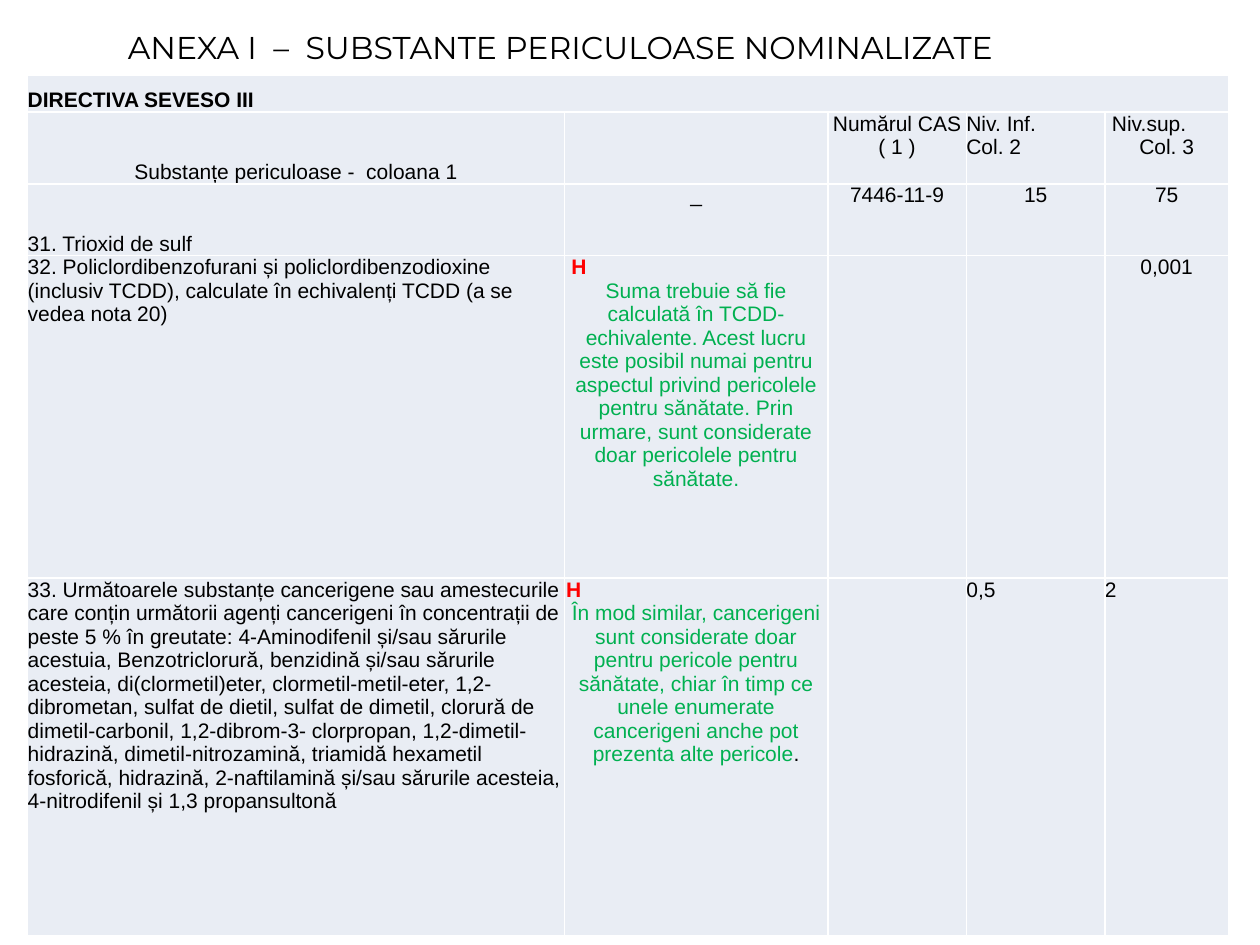
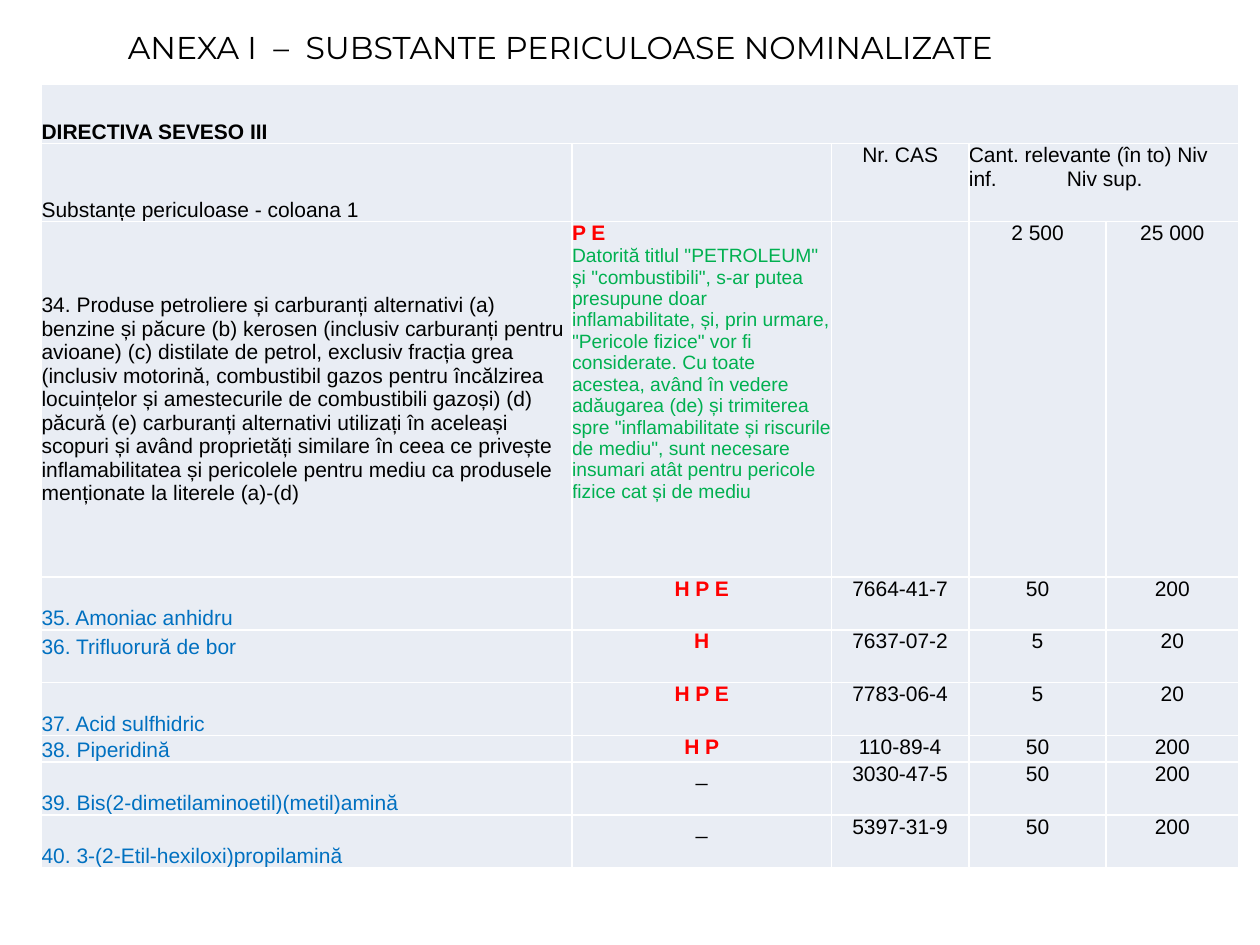
from dataclasses import dataclass
from lxml.etree import SubElement
from pptx import Presentation
from pptx.dml.color import RGBColor
from pptx.enum.text import MSO_ANCHOR, MSO_AUTO_SIZE, PP_ALIGN
from pptx.oxml.ns import qn
from pptx.util import Pt

COLORS = {
    "text": "000000",
    "cell": "E9EDF4",
    "border": "FFFFFF",
    "hazard": "FF0000",
    "note": "00B050",
    "substance": "0070C0",
}

# Text styles: colour, size, bold
STYLES = {
    "plain": ("text", 12, False),
    "heading": ("text", 12, True),
    "hazard": ("hazard", 12, True),
    "note": ("note", 12, False),
    "small note": ("note", 11, False),
    "substance": ("substance", 12, False),
}
TITLE = "ANEXA I  –  SUBSTANTE PERICULOASE NOMINALIZATE"
DIRECTIVE = "DIRECTIVA SEVESO III"
LEFT, CENTER = PP_ALIGN.LEFT, PP_ALIGN.CENTER
TOP, MIDDLE, BOTTOM = MSO_ANCHOR.TOP, MSO_ANCHOR.MIDDLE, MSO_ANCHOR.BOTTOM


@dataclass
class Line:
    """One paragraph: (text, style) spans with their placing."""
    spans: list
    align: PP_ALIGN = LEFT
    indent: float = 0
    tab: float = 0


@dataclass
class Entry:
    """The content of one table cell."""
    lines: list
    anchor: MSO_ANCHOR = TOP
    span: int = 1
    bottom_gap: float = 0


def entry(text, style="plain", align=LEFT, anchor=TOP, **options):
    return Entry([Line([(text, style)], align)], anchor, **options)


def centered(text, style="plain"):
    return entry(text, style, CENTER)


def hazard_note(hazard, note, style="note", align=CENTER, indent=0, ending=""):
    """Red hazard letters with a green remark below."""
    spans = [(note, style)] + ([(ending, "plain")] if ending else [])
    return Entry([Line([(hazard, "hazard")], indent=indent), Line(spans, align)])


def substance_row(name, hazard, cas, low, high, gap=0):
    hazard_style = "plain" if hazard == "_" else "hazard"
    return [entry(name, "substance", anchor=BOTTOM, bottom_gap=gap),
            centered(hazard, hazard_style),
            centered(cas), centered(low), centered(high)]


def set_font(span, name, size, color, bold=False):
    span.font.name = name
    span.font.size = Pt(size)
    span.font.bold = bold
    span.font.color.rgb = RGBColor.from_string(COLORS[color])


def write_line(para, line):
    para.alignment = line.align
    para.text = line.spans[0][0]
    for text, _ in line.spans[1:]:
        para.add_run().text = text
    for span, (_, style) in zip(para.runs, line.spans):
        color, size, bold = STYLES[style]
        set_font(span, "Arial", size, color, bold)
    properties = para._p.get_or_add_pPr()
    if line.indent:
        properties.set("marL", str(Pt(line.indent)))
    if line.tab:
        stops = SubElement(properties, qn("a:tabLst"))
        SubElement(stops, qn("a:tab"), pos=str(Pt(line.tab)), algn="l")


def style_cell(cell):
    """White borders, pale fill and no margins."""
    properties = cell._tc.get_or_add_tcPr()
    for side in ("lnL", "lnR", "lnT", "lnB"):
        border = SubElement(properties, qn(f"a:{side}"), w=str(Pt(1)))
        fill = SubElement(border, qn("a:solidFill"))
        SubElement(fill, qn("a:srgbClr"), val=COLORS["border"])
    cell.fill.solid()
    cell.fill.fore_color.rgb = RGBColor.from_string(COLORS["cell"])
    cell.margin_left = cell.margin_right = cell.margin_top = cell.margin_bottom = 0


def write_cell(cell, content):
    cell.vertical_anchor = content.anchor
    cell.margin_bottom = Pt(content.bottom_gap)
    frame = cell.text_frame
    for number, line in enumerate(content.lines):
        write_line(frame.add_paragraph() if number else frame.paragraphs[0], line)


def add_substance_table(page, left, top, widths, heights, rows):
    frame = page.shapes.add_table(len(heights), len(widths), Pt(left), Pt(top),
                                  Pt(sum(widths)), Pt(sum(heights)))
    table = frame.table
    table.first_row = table.horz_banding = False
    for column, width in zip(table.columns, widths):
        column.width = Pt(width)
    for row, height in zip(table.rows, heights):
        row.height = Pt(height)
    for cell in table.iter_cells():
        style_cell(cell)
    for row_number, contents in enumerate(rows):
        for column_number, content in enumerate(contents):
            if content is None:
                continue
            cell = table.cell(row_number, column_number)
            if content.span > 1:
                last = column_number + content.span - 1
                cell.merge(table.cell(row_number, last))
            write_cell(cell, content)


def add_title(page):
    box = page.shapes.add_textbox(Pt(66), Pt(12.24), Pt(624), Pt(28.8))
    frame = box.text_frame
    frame.word_wrap = True
    frame.auto_size = MSO_AUTO_SIZE.SHAPE_TO_FIT_TEXT
    frame.text = TITLE
    set_font(frame.paragraphs[0].runs[0], "Montserrat", 18, "text")


def add_page(deck, **table):
    page = deck.slides.add_slide(deck.slide_layouts[6])
    add_substance_table(page, **table)
    add_title(page)


def directive_row():
    return [entry(DIRECTIVE, "heading", anchor=BOTTOM, span=5)]


def carcinogen_rows():
    """Substances 31 to 33."""
    return [
        directive_row(),
        [entry("Substanțe periculoase -  coloana 1", align=CENTER, anchor=BOTTOM),
         None,
         centered("Numărul CAS ( 1 )"),
         Entry([Line([("Niv. Inf.", "plain")]), Line([("Col. 2", "plain")])]),
         Entry([Line([("Niv.sup.", "plain")], indent=4),
                Line([("Col. 3", "plain")], CENTER)])],
        [entry("31. Trioxid de sulf", anchor=BOTTOM), centered("_"),
         centered("7446-11-9"), centered("15"), centered("75")],
        [entry("32. Policlordibenzofurani și policlordibenzodioxine (inclusiv TCDD), "
               "calculate în echivalenți TCDD (a se vedea nota 20)"),
         hazard_note("H", "Suma trebuie să fie calculată în TCDD-echivalente. Acest lucru "
                     "este posibil numai pentru aspectul privind pericolele pentru "
                     "sănătate. Prin urmare, sunt considerate doar pericolele pentru "
                     "sănătate.", indent=4),
         None, None, centered("0,001")],
        [entry("33. Următoarele substanțe cancerigene sau amestecurile care conțin "
               "următorii agenți cancerigeni în concentrații de peste 5 % în greutate: "
               "4-Aminodifenil și/sau sărurile acestuia, Benzotriclorură, benzidină "
               "și/sau sărurile acesteia, di(clormetil)eter, clormetil-metil-eter, "
               "1,2-dibrometan, sulfat de dietil, sulfat de dimetil, clorură de "
               "dimetil-carbonil, 1,2-dibrom-3- clorpropan, 1,2-dimetil-hidrazină, "
               "dimetil-nitrozamină, triamidă hexametil fosforică, hidrazină, "
               "2-naftilamină și/sau sărurile acesteia, 4-nitrodifenil și 1,3 "
               "propansultonă"),
         hazard_note("H", "În mod similar, cancerigeni sunt considerate doar pentru "
                     "pericole pentru sănătate, chiar în timp ce unele enumerate "
                     "cancerigeni anche pot prezenta alte pericole", indent=1, ending="."),
         None, entry("0,5"), entry("2")],
    ]


def petroleum_rows():
    """Substances 34 to 40."""
    return [
        directive_row(),
        [entry("Substanțe periculoase - coloana 1", anchor=BOTTOM), None,
         centered("Nr. CAS"),
         Entry([Line([("Cant. relevante (în to) Niv", "plain")]),
                Line([("inf.\tNiv sup.", "plain")], tab=56)], span=2)],
        [entry("34. Produse petroliere și carburanți alternativi (a) benzine și păcure "
               "(b) kerosen (inclusiv carburanți pentru avioane) (c) distilate de petrol, "
               "exclusiv fracția grea (inclusiv motorină, combustibil gazos pentru "
               "încălzirea locuințelor și amestecurile de combustibili gazoși) (d) păcură "
               "(e) carburanți alternativi utilizați în aceleași scopuri și având "
               "proprietăți similare în ceea ce privește inflamabilitatea și pericolele "
               "pentru mediu ca produsele menționate la literele (a)-(d)", anchor=MIDDLE),
         hazard_note("P E", 'Datorită titlul "PETROLEUM" și "combustibili", s-ar putea '
                     'presupune doar inflamabilitate, și, prin urmare, "Pericole fizice" '
                     'vor fi considerate. Cu toate acestea, având în vedere adăugarea '
                     '(de) și trimiterea spre "inflamabilitate și riscurile de mediu", '
                     'sunt necesare insumari atât pentru pericole fizice cat și de mediu',
                     style="small note", align=LEFT),
         None, centered("2 500"), centered("25 000")],
        substance_row("35. Amoniac anhidru", "H P E", "7664-41-7", "50", "200"),
        substance_row("36. Trifluorură de bor", "H", "7637-07-2", "5", "20", gap=13.5),
        substance_row("37. Acid sulfhidric", "H P E", "7783-06-4", "5", "20"),
        substance_row("38. Piperidină", "H P", "110-89-4", "50", "200"),
        substance_row("39. Bis(2-dimetilaminoetil)(metil)amină", "_", "3030-47-5",
                      "50", "200"),
        substance_row("40. 3-(2-Etil-hexiloxi)propilamină", "_", "5397-31-9",
                      "50", "200"),
    ]


def main():
    deck = Presentation()
    deck.slide_width, deck.slide_height = Pt(720), Pt(540)

    add_page(deck, left=15.84, top=43.2,
             widths=[306.72, 150.48, 79.2, 79.2, 70.56],
             heights=[20.88, 41.04, 41.04, 184.32, 204.48],
             rows=carcinogen_rows())

    # One-line rows are half as high as the others
    add_page(deck, left=23.76, top=48.24,
             widths=[303.12, 148.32, 78.48, 78.48, 75.6],
             heights=[33.84, 44.64, 203.04] + [30.24] * 3 + [15.12] + [30.24] * 2,
             rows=petroleum_rows())

    deck.save("out.pptx")


if __name__ == "__main__":
    main()
